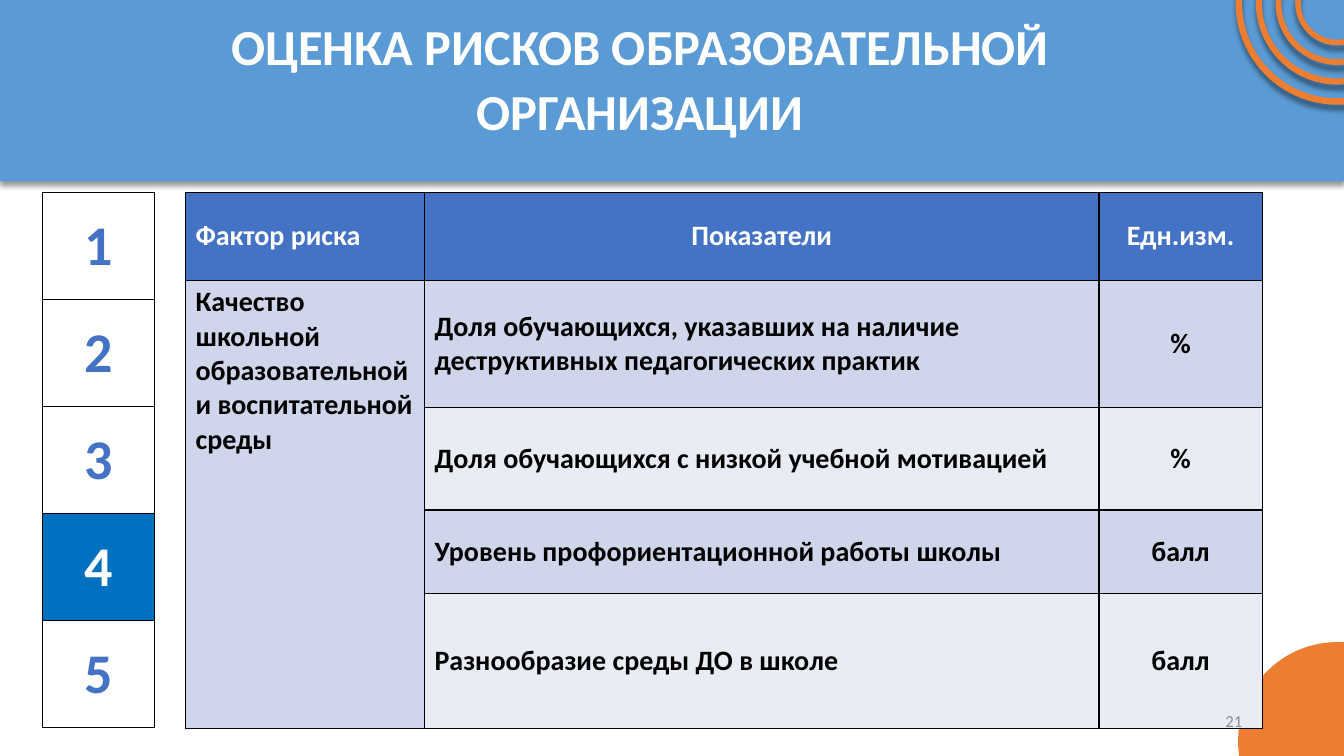
from lxml import etree
from pptx import Presentation, oxml
from pptx.dml.color import RGBColor
from pptx.enum import shapes as sh, text as tx
from pptx.util import Inches, Pt

WHITE = RGBColor(0xFF, 0xFF, 0xFF)
BLACK = RGBColor(0, 0, 0)
SKY = RGBColor(0x5B, 0x9B, 0xD5)
ORANGE = RGBColor(0xED, 0x7D, 0x31)
BLUE = RGBColor(0x44, 0x72, 0xC4)
DEEP = RGBColor(0x00, 0x70, 0xC0)
DARK = RGBColor(0xCF, 0xD5, 0xEA)
LIGHT = RGBColor(0xE9, 0xEB, 0xF5)
GRAY = RGBColor(0x8C, 0x8C, 0x8C)
NS = 'xmlns:a="http://schemas.openxmlformats.org/drawingml/2006/main"'
LEFT, MID, RIGHT = tx.PP_ALIGN.LEFT, tx.PP_ALIGN.CENTER, tx.PP_ALIGN.RIGHT

prs = Presentation()
prs.slide_width, prs.slide_height = Inches(13.33), Inches(7.5)
slide = prs.slides.add_slide(prs.slide_layouts[5])


def draw(kind, x, y, w, h, color, shade=None):
    """Add a filled shape; shade is opacity, blur and distance of its shadow."""
    item = slide.shapes.add_shape(kind, Inches(x), Inches(y), Inches(w), Inches(h))
    item.fill.solid()
    item.fill.fore_color.rgb = color
    item.line.fill.background()
    item.shadow.inherit = False
    if shade:
        alpha, blur, dist = shade
        item._element.spPr.find(oxml.ns.qn("a:effectLst")).append(etree.fromstring(
            f'<a:outerShdw {NS} blurRad="{Pt(blur)}" dist="{Pt(dist)}" dir="5400000" '
            f'rotWithShape="0"><a:srgbClr val="000000"><a:alpha val="{alpha * 1000}"/>'
            '</a:srgbClr></a:outerShdw>'))
    return item


def write(cell, words, size, color, fill, align=MID, anchor=tx.MSO_ANCHOR.MIDDLE):
    """Fill a table cell with bold text and give it thin black borders."""
    cell.text_frame.text = words
    cell.vertical_anchor = anchor
    para = cell.text_frame.paragraphs[0]
    para.alignment = align
    for run in para.runs:
        run.font.name, run.font.size, run.font.bold = "Calibri", Pt(size), True
        run.font.color.rgb = color
    for side in "LRTB":
        cell._tc.get_or_add_tcPr().append(etree.fromstring(
            f'<a:ln{side} {NS} w="{Pt(1)}"><a:solidFill><a:srgbClr val="000000"/>'
            f'</a:solidFill></a:ln{side}>'))
    cell.fill.solid()
    cell.fill.fore_color.rgb = fill


# Title band and corner circles
draw(sh.MSO_SHAPE.RECTANGLE, 0, 0, 13.33, 1.8, SKY, (40, 4, 3))
draw(sh.MSO_SHAPE.OVAL, 12.28, 6.37, 1.97, 1.97, ORANGE)
for size in (1.97, 1.57, 1.18, 0.79):
    ring = draw(sh.MSO_SHAPE.DONUT, 13.265 - size / 2, -size / 2, size, size,
                ORANGE, (43, 4, 4))
    ring.top = Inches(0.03 - size / 2)
    ring.adjustments[0] = 0.008
    ring.line.color.rgb = ORANGE
    ring.line.width = Pt(3.5)

# Title, brought in front of the band
title = slide.shapes.title
slide.shapes._spTree.append(title._element)
title.left, title.top = Inches(0.6), Inches(0.14)
title.width, title.height = Inches(11.5), Inches(1.22)
title.text_frame.text = "ОЦЕНКА РИСКОВ ОБРАЗОВАТЕЛЬНОЙ ОРГАНИЗАЦИИ"
title.text_frame.auto_size = tx.MSO_AUTO_SIZE.NONE
title.text_frame.vertical_anchor = tx.MSO_ANCHOR.MIDDLE
para = title.text_frame.paragraphs[0]
para.alignment, para.line_spacing, para.space_after = MID, 1.07, Pt(8)
font = para.runs[0].font
font.name, font.size, font.bold = "Calibri", Pt(36), True
font.color.rgb = WHITE

# Risk table
rows = [
    ("Фактор риска", "Показатели", "Едн.изм."),
    ("Качество школьной образовательной и воспитательной среды",
     "Доля обучающихся, указавших на наличие деструктивных педагогических практик", "%"),
    ("", "Доля обучающихся с низкой учебной мотивацией", "%"),
    ("", "Уровень профориентационной работы школы", "балл"),
    ("", "Разнообразие среды ДО в школе", "балл"),
]
risks = slide.shapes.add_table(5, 3, Inches(1.84), Inches(1.91),
                               Inches(10.68), Inches(5.31)).table
for col, width in zip(risks.columns, (2.37, 6.69, 1.62)):
    col.width = Inches(width)
for row, height in zip(risks.rows, (0.87, 1.26, 1.02, 0.83, 1.34)):
    row.height = Inches(height)
for r, line in enumerate(rows):
    for c, words in enumerate(line):
        head, first = r == 0, c == 0
        fill = BLUE if head else DARK if first or r % 2 else LIGHT
        align = LEFT if first or (c == 1 and not head) else MID
        anchor = tx.MSO_ANCHOR.TOP if first and not head else tx.MSO_ANCHOR.MIDDLE
        write(risks.cell(r, c), words, 20, WHITE if head else BLACK, fill, align, anchor)
risks.cell(1, 0).merge(risks.cell(4, 0))

# Step numbers, the fourth one active
steps = slide.shapes.add_table(5, 1, Inches(0.42), Inches(1.91),
                               Inches(1.11), Inches(5.31)).table
for r in range(5):
    on = r == 3
    write(steps.cell(r, 0), str(r + 1), 40, WHITE if on else BLUE, DEEP if on else WHITE)

# Slide number
page = slide.shapes.add_textbox(Inches(9.42), Inches(6.95), Inches(3), Inches(0.4))
page.text_frame.word_wrap = True
page.text_frame.vertical_anchor = tx.MSO_ANCHOR.MIDDLE
page.text_frame.text = "21"
para = page.text_frame.paragraphs[0]
para.alignment = RIGHT
font = para.runs[0].font
font.name, font.size = "Calibri", Pt(12)
font.color.rgb = GRAY

prs.save("out.pptx")
